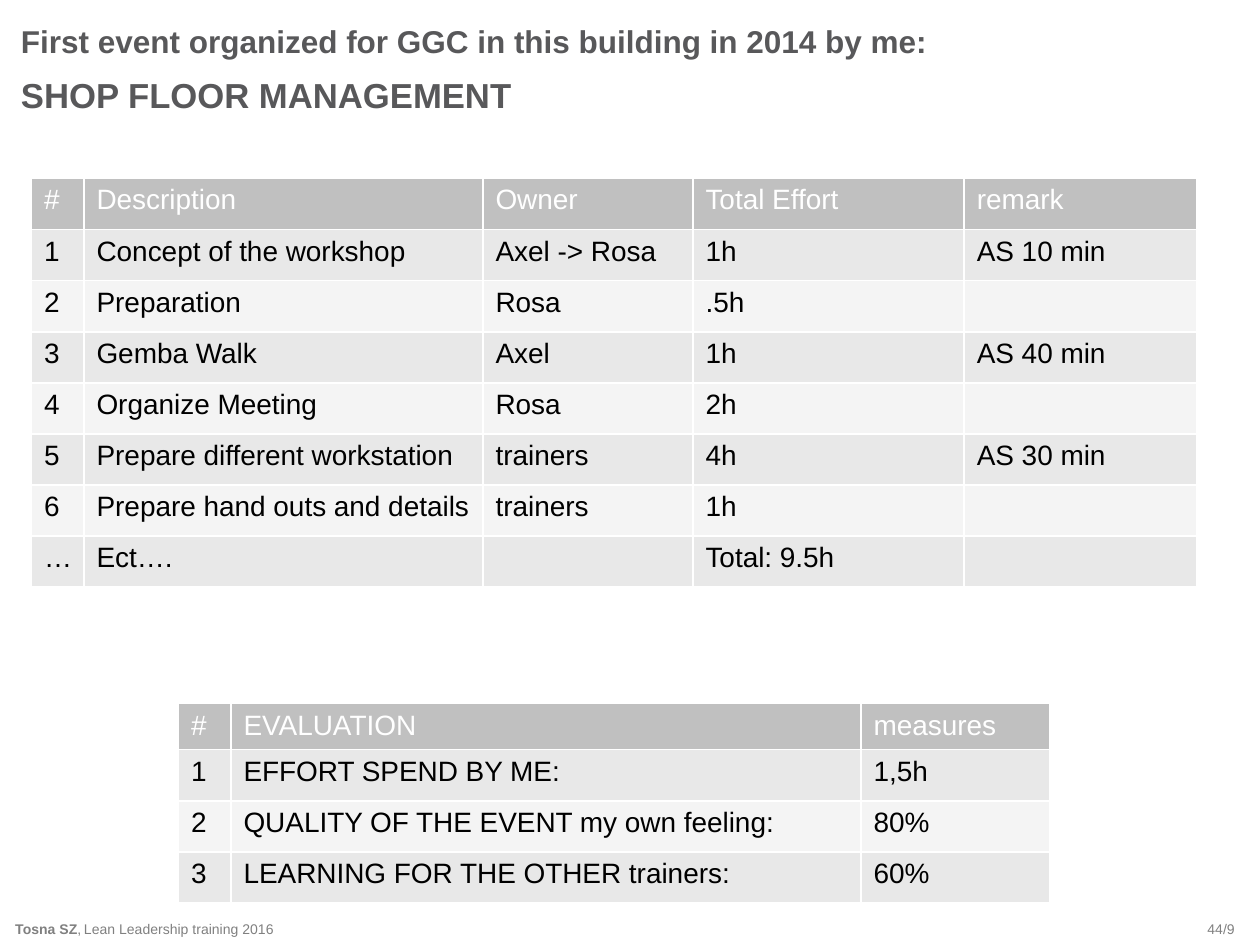
from dataclasses import dataclass

from lxml.etree import SubElement
from pptx import Presentation
from pptx.dml.color import RGBColor
from pptx.enum.text import MSO_ANCHOR as Anchor, PP_ALIGN as Align
from pptx.oxml.ns import qn
from pptx.util import Pt

FONT = "Arial"
WHITE = RGBColor(0xFF, 0xFF, 0xFF)
BLACK = RGBColor(0x00, 0x00, 0x00)
TITLE = RGBColor(0x58, 0x58, 0x5A)
FOOTER = RGBColor(0x80, 0x80, 0x80)
HEADER_FILL = RGBColor(0xC0, 0xC0, 0xC0)
BAND_FILLS = (RGBColor(0xF4, 0xF4, 0xF4), RGBColor(0xE8, 0xE8, 0xE8))


@dataclass
class Run:
    text: str
    size: float
    bold: bool = False


@dataclass
class Label:
    left: float
    top: float
    width: float
    height: float
    color: RGBColor
    paragraphs: list[list[Run]]
    align: Align = Align.LEFT
    inset_left: float = 0
    inset_right: float = 0
    line: float | None = None
    gap: float = 0


@dataclass
class Grid:
    left: float
    top: float
    columns: list[float]
    header_height: float
    rows: list[list[str]]


ROW_HEIGHT = 29.2

LABELS = [
    Label(666, 522, 54, 18, FOOTER, [[Run("44/9", 8)]], Align.RIGHT, inset_right=14.4),
    Label(0, 522, 48, 18, FOOTER, [[Run("Tosna SZ", 8, True), Run(",", 8)]],
          Align.RIGHT, inset_left=3, inset_right=1.5),
    Label(48, 522, 588, 18, FOOTER, [[Run("Lean Leadership training 2016", 8)]]),
    Label(12, 30, 594, 24, TITLE,
          [[Run("First event organized for GGC in this building in 2014 by me:", 18, True)],
           [Run("SHOP FLOOR MANAGEMENT", 19.8, True)]], line=16, gap=16),
]

GRIDS = [
    Grid(18, 102, [30, 228, 120, 155, 133], ROW_HEIGHT, [
        ["#", "Description", "Owner", "Total Effort", "remark"],
        ["1", "Concept of the workshop", "Axel -> Rosa", "1h", "AS 10 min"],
        ["2", "Preparation", "Rosa", ".5h", ""],
        ["3", "Gemba Walk", "Axel", "1h", "AS 40 min"],
        ["4", "Organize Meeting", "Rosa", "2h", ""],
        ["5", "Prepare different workstation", "trainers", "4h", "AS 30 min"],
        ["6", "Prepare hand outs and details", "trainers", "1h", ""],
        ["…", "Ect….", "", "Total: 9.5h", ""],
    ]),
    Grid(102, 402, [30, 360, 108], 25, [
        ["#", "EVALUATION", "measures"],
        ["1", "EFFORT SPEND BY ME:", "1,5h"],
        ["2", "QUALITY OF THE EVENT my own feeling:", "80%"],
        ["3", "LEARNING FOR THE OTHER trainers:", "60%"],
    ]),
]


def style_font(font, size: float, color: RGBColor, bold: bool = False) -> None:
    font.name = FONT
    font.size = Pt(size)
    font.bold = bold
    font.color.rgb = color


def add_label(s, label: Label) -> None:
    box = s.shapes.add_textbox(Pt(label.left), Pt(label.top), Pt(label.width), Pt(label.height))
    tf = box.text_frame
    tf.word_wrap = True
    tf.vertical_anchor = Anchor.MIDDLE
    tf.margin_top = tf.margin_bottom = 0
    tf.margin_left, tf.margin_right = Pt(label.inset_left), Pt(label.inset_right)
    for i, runs in enumerate(label.paragraphs):
        p = tf.add_paragraph() if i else tf.paragraphs[0]
        p.alignment = label.align
        if label.line:
            p.line_spacing = Pt(label.line)
        if i:
            p.space_before = Pt(label.gap)
        for run in runs:
            r = p.add_run()
            r.text = run.text
            style_font(r.font, run.size, label.color, run.bold)


def add_borders(cell) -> None:
    """Draw a thin white line on each side; borders must precede the cell fill."""
    props = cell._tc.get_or_add_tcPr()
    for side in ("a:lnL", "a:lnR", "a:lnT", "a:lnB"):
        ln = SubElement(props, qn(side), w=str(Pt(1)))
        fill = SubElement(ln, qn("a:solidFill"))
        SubElement(fill, qn("a:srgbClr"), val=str(WHITE))


def add_grid(s, grid: Grid) -> None:
    heights = [grid.header_height] + [ROW_HEIGHT] * (len(grid.rows) - 1)
    table = s.shapes.add_table(len(grid.rows), len(grid.columns), Pt(grid.left), Pt(grid.top),
                               Pt(sum(grid.columns)), Pt(sum(heights))).table
    table.first_row = table.horz_banding = False
    for column, width in zip(table.columns, grid.columns):
        column.width = Pt(width)
    for i, (texts, height) in enumerate(zip(grid.rows, heights)):
        table.rows[i].height = Pt(height)
        for j, text in enumerate(texts):
            cell = table.cell(i, j)
            add_borders(cell)
            cell.fill.solid()
            cell.fill.fore_color.rgb = BAND_FILLS[i % 2] if i else HEADER_FILL
            p = cell.text_frame.paragraphs[0]
            p.text = text
            for r in p.runs:
                style_font(r.font, 16, BLACK if i else WHITE)


def main() -> None:
    prs = Presentation()
    prs.slide_width, prs.slide_height = Pt(720), Pt(540)
    s = prs.slides.add_slide(prs.slide_layouts[6])
    for label in LABELS:
        add_label(s, label)
    for grid in GRIDS:
        add_grid(s, grid)
    prs.save("out.pptx")


if __name__ == "__main__":
    main()
